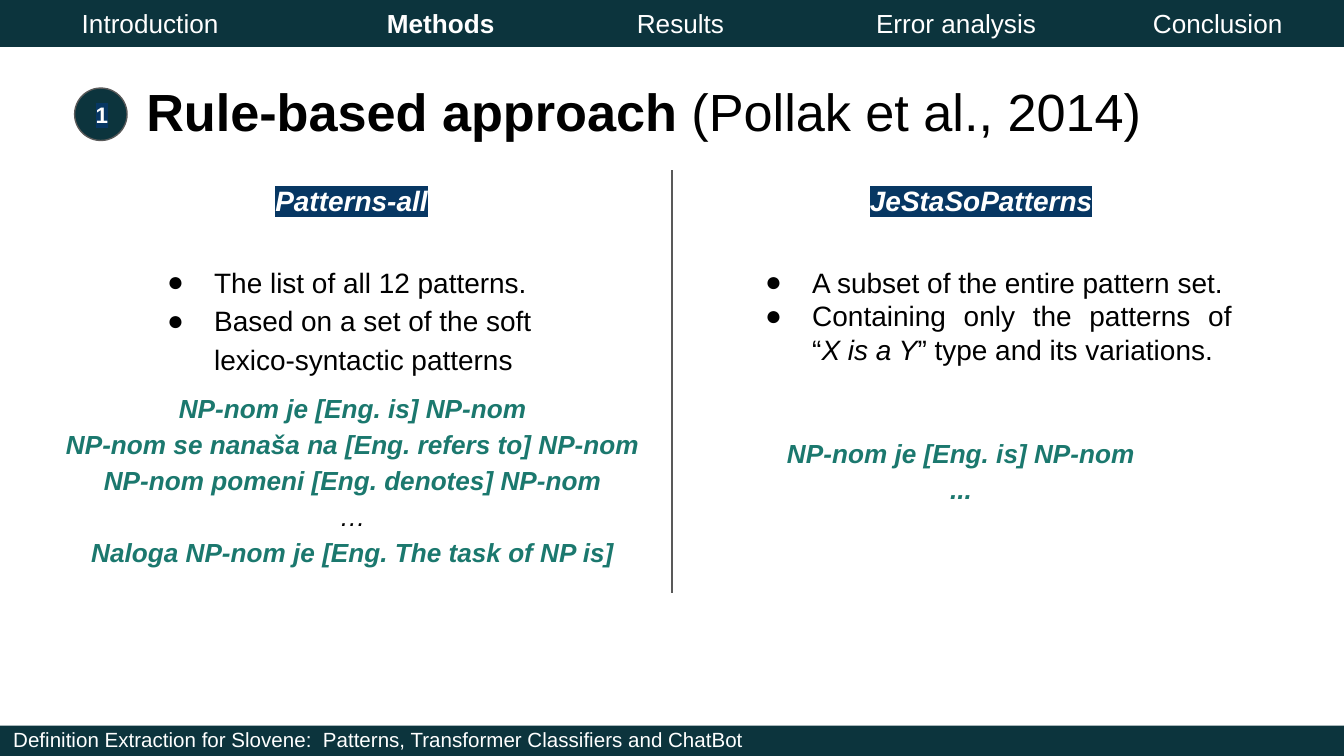
import pptx
import pptx.util
import pptx.dml.color
import pptx.enum.shapes
import pptx.enum.text
import pptx.oxml.ns
from lxml import etree

RGB = pptx.dml.color.RGBColor
DARK = RGB(0x0C, 0x34, 0x3D)
NAVY = RGB(0x07, 0x37, 0x63)
GREEN = RGB(0x1B, 0x78, 0x6E)
GRAY = RGB(0x59, 0x59, 0x59)
BLACK = RGB(0, 0, 0)
WHITE = RGB(255, 255, 255)

# Square grid: 100 columns across the slide, rows of the same size
W, H = 100, 56.25
UNIT = pptx.util.Inches(10) // W
SHAPE = pptx.enum.shapes.MSO_SHAPE
ALIGN = pptx.enum.text.PP_ALIGN
ANCHOR = pptx.enum.text.MSO_ANCHOR
qn = pptx.oxml.ns.qn

NAV = [("Introduction", 5.1, 12.6), ("Methods", 27.8, 16.6),
       ("Results", 46.4, 16.6), ("Error analysis", 64.2, 14.6),
       ("Conclusion", 84.8, 15.2)]
CURRENT = "Methods"
BREAK = "\n"


def grid(*cells):
    return [int(c * UNIT) for c in cells]


def add_run(p, text, size, color, highlight=None, **fmt):
    if text == BREAK:
        p.add_line_break()
        etree.SubElement(p._p[-1], qn("a:rPr"), sz=str(size * 100))
        return
    r = p.add_run()
    r.text = text
    r.font.color.rgb = color
    for key, value in {"name": "Arial", "size": pptx.util.Pt(size), **fmt}.items():
        setattr(r.font, key, value)
    if highlight is not None:
        mark = etree.Element(qn("a:highlight"))
        etree.SubElement(mark, qn("a:srgbClr"), val=str(highlight))
        r.font._element.find(qn("a:solidFill")).addnext(mark)


def add_bullet(p, size):
    pPr = p._p.get_or_add_pPr()
    for key, inches in {"marL": 0.5, "indent": -0.35}.items():
        pPr.set(key, str(pptx.util.Inches(inches)))
    color = etree.SubElement(pPr, qn("a:buClr"))
    etree.SubElement(color, qn("a:srgbClr"), val=str(BLACK))
    etree.SubElement(pPr, qn("a:buSzPts"), val=str(size * 100))
    etree.SubElement(pPr, qn("a:buFont"), typeface="Arial")
    etree.SubElement(pPr, qn("a:buChar"), char="●")


def fill_text(tf, paragraphs, bullets=False, bottom=1, anchor=ANCHOR.TOP, **p_fmt):
    """Each paragraph is a list of (text, size, color, format) runs."""
    m = UNIT
    frame = {"word_wrap": True, "vertical_anchor": anchor, "margin_left": m,
             "margin_right": m, "margin_top": m, "margin_bottom": int(bottom * UNIT)}
    for key, value in frame.items():
        setattr(tf, key, value)
    for i, runs in enumerate(paragraphs):
        p = tf.add_paragraph() if i else tf.paragraphs[0]
        for key, value in p_fmt.items():
            setattr(p, key, value)
        if bullets:
            add_bullet(p, runs[0][1])
        for text, size, color, fmt in runs:
            add_run(p, text, size, color, **fmt)


def add_text(s, box, paragraphs, **fmt):
    fill_text(s.shapes.add_textbox(*grid(*box)).text_frame, paragraphs, **fmt)


def add_solid(s, kind, box, line=None):
    sp = s.shapes.add_shape(kind, *grid(*box))
    sp.shadow.inherit = False
    sp.fill.solid()
    sp.fill.fore_color.rgb = DARK
    if line is None:
        sp.line.fill.background()
    else:
        sp.line.color.rgb = line
        sp.line.width = pptx.util.Pt(0.75)
    return sp


def add_divider(s, x, top, bottom):
    line = s.shapes.add_connector(pptx.enum.shapes.MSO_CONNECTOR.STRAIGHT,
                                  *grid(x, top, x, bottom))
    line.line.color.rgb = GRAY
    line.line.width = pptx.util.Pt(1.5)
    etree.SubElement(line._element.spPr, qn("a:effectLst"))


def add_patterns(s, box, lines, **fmt):
    paragraphs = []
    for text in lines:
        plain = text == "…"
        paragraphs.append([(text, 14, BLACK if plain else GREEN,
                            {"bold": not plain, "italic": True})])
    add_text(s, box, paragraphs, anchor=ANCHOR.MIDDLE,
             alignment=ALIGN.CENTER, line_spacing=1.15, **fmt)


def main():
    prs = pptx.Presentation()
    prs.slide_width, prs.slide_height = grid(W, H)
    s = prs.slides.add_slide(prs.slide_layouts[6])

    # Footer and navigation bars
    add_solid(s, SHAPE.RECTANGLE, (0, 54, W, H - 54))
    add_solid(s, SHAPE.RECTANGLE, (0, 0, W, 3.5))
    for label, x, width in NAV:
        add_text(s, (x, -0.45, width, 4.4),
                 [[(label, 14, WHITE, {"bold": label == CURRENT})]])
    add_text(s, (0, 53.2, 94.1, 3.9),
             [[("Definition Extraction for Slovene:  Patterns, Transformer "
                "Classifiers and ChatBot", 11, WHITE, {})]])

    # Numbered title
    badge = add_solid(s, SHAPE.OVAL, (5.55, 6.55, 3.9, 3.9), GRAY)
    fill_text(badge.text_frame, [[("1", 12, WHITE, {"bold": True, "highlight": NAVY})]],
              anchor=ANCHOR.MIDDLE, alignment=ALIGN.CENTER)
    add_text(s, (9.9, 4.9, 86.7, 6.3),
             [[("Rule-based approach ", 28, BLACK, {"bold": True}),
               ("(Pollak et al., 2014)", 28, BLACK, {})]])

    # Column headings and divider
    add_divider(s, W / 2, 12.65, 44.1)
    for heading, x in (("Patterns-all", 9.9), ("JeStaSoPatterns", 56.75)):
        add_text(s, (x, 12.65, 32.5, 4.5),
                 [[(heading, 15, WHITE,
                    {"bold": True, "italic": True, "highlight": NAVY})]],
                 alignment=ALIGN.CENTER)

    # Left column
    add_text(s, (9.95, 18.35, 32.5, 10.4),
             [[("The list of all 12 patterns.", 15, BLACK, {})],
              [("Based on a set of the soft lexico-syntactic patterns", 15, BLACK, {})]],
             bullets=True, line_spacing=1.15)
    add_patterns(s, (3.9, 30.6, 44.7, 12),
                 ["NP-nom je [Eng. is] NP-nom",
                  "NP-nom se nanaša na [Eng. refers to] NP-nom",
                  "NP-nom pomeni [Eng. denotes] NP-nom",
                  "…",
                  "Naloga NP-nom je [Eng. The task of NP is]"], bottom=3.1)

    # Right column
    add_text(s, (54.45, 18.75, 38.2, 9.6),
             [[("A subset of the entire pattern set.", 15, BLACK, {})],
              [("Containing only the patterns of", 15, BLACK, {}),
               (BREAK, 15, BLACK, {}),
               ("“", 15, BLACK, {}),
               ("X is a Y", 15, BLACK, {"italic": True}),
               ("” type and its variations.", 15, BLACK, {})]],
             bullets=True, alignment=ALIGN.JUSTIFY)
    add_patterns(s, (56.75, 31.55, 29.5, 6.7), ["NP-nom je [Eng. is] NP-nom", "..."])

    prs.save("out.pptx")


if __name__ == "__main__":
    main()
